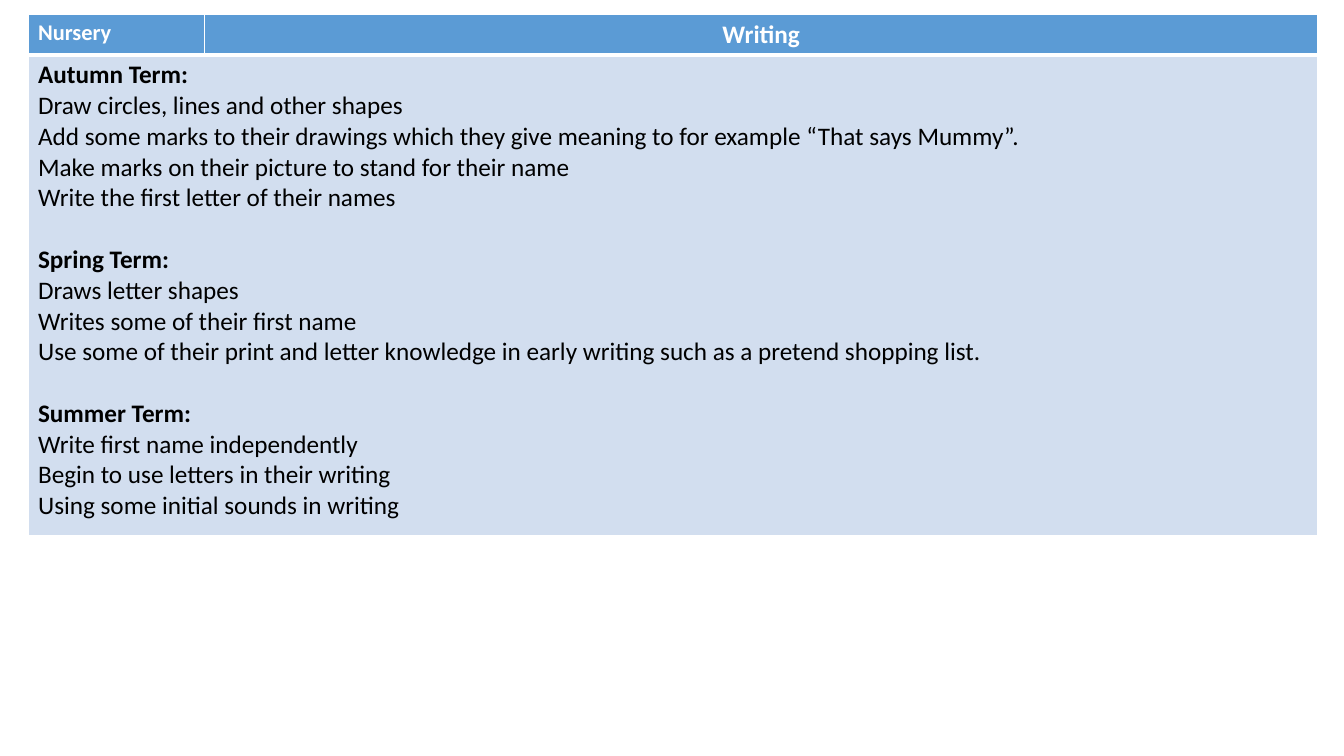
from lxml import etree
from pptx import Presentation
from pptx.dml.color import RGBColor
from pptx.enum import text
from pptx.oxml import ns
from pptx.util import Pt

WHITE = RGBColor(0xFF, 0xFF, 0xFF)
BLACK = RGBColor(0, 0, 0)
HEADER_BLUE = RGBColor(0x5B, 0x9B, 0xD5)
BODY_BLUE = RGBColor(0xD2, 0xDE, 0xEF)
FONT = "Calibri"
TEXT_SIZE = 18
LINE_HEIGHT = 22

TERMS = {
    "Autumn Term:": [
        "Draw circles, lines and other shapes",
        "Add some marks to their drawings which they give meaning to for example “That says Mummy”.",
        "Make marks on their picture to stand for their name",
        "Write the first letter of their names",
    ],
    "Spring Term:": [
        "Draws letter shapes",
        "Writes some of their first name",
        "Use some of their print and letter knowledge in early writing such as a pretend shopping list.",
    ],
    "Summer Term:": [
        "Write first name independently",
        "Begin to use letters in their writing",
        "Using some initial sounds in writing",
    ],
}


def write(para, words, size=TEXT_SIZE, color=BLACK, bold=False,
          align=text.PP_ALIGN.LEFT, before=0):
    para.alignment = align
    para.space_before = Pt(before)
    span = para.add_run()
    span.text = words
    span.font.name = FONT
    span.font.size = Pt(size)
    span.font.bold = bold
    span.font.color.rgb = color


def style_cell(cell, fill, bottom=1):
    cell.fill.solid()
    cell.fill.fore_color.rgb = fill
    # Borders come before the fill in the cell properties
    props = cell._tc.get_or_add_tcPr()
    widths = {"lnL": 1, "lnR": 1, "lnT": 1, "lnB": bottom}
    for position, (side, width) in enumerate(widths.items()):
        line = etree.Element(ns.qn(f"a:{side}"), w=str(Pt(width)))
        solid = etree.SubElement(line, ns.qn("a:solidFill"))
        etree.SubElement(solid, ns.qn("a:srgbClr"), val=str(WHITE))
        props.insert(position, line)


def fill_header(row):
    nursery, writing = row.cells
    for cell in (nursery, writing):
        style_cell(cell, HEADER_BLUE, bottom=3)
    write(nursery.text_frame.paragraphs[0], "Nursery", size=16, color=WHITE, bold=True)
    write(writing.text_frame.paragraphs[0], "Writing", color=WHITE, bold=True,
          align=text.PP_ALIGN.CENTER)


def fill_terms(row):
    body, hidden_half = row.cells
    body.merge(hidden_half)
    for cell in (body, hidden_half):
        style_cell(cell, BODY_BLUE)
    frame = body.text_frame
    para = frame.paragraphs[0]
    for number, (term, goals) in enumerate(TERMS.items()):
        if number:
            para = frame.add_paragraph()
        write(para, term, bold=True, before=LINE_HEIGHT if number else 0)
        for goal in goals:
            write(frame.add_paragraph(), goal)


def add_writing_table(page, left, top, width, height):
    table = page.shapes.add_table(2, 2, Pt(left), Pt(top), Pt(width), Pt(height)).table
    table.horz_banding = False
    first_column, header_height = 126, 29
    for column, size in zip(table.columns, (first_column, width - first_column)):
        column.width = Pt(size)
    for row, size in zip(table.rows, (header_height, height - header_height)):
        row.height = Pt(size)
    fill_header(table.rows[0])
    fill_terms(table.rows[1])


def main():
    deck = Presentation()
    deck.slide_width, deck.slide_height = Pt(960), Pt(540)
    page = deck.slides.add_slide(deck.slide_layouts[6])
    add_writing_table(page, left=20, top=10, width=921.5, height=372.5)
    deck.save("out.pptx")


if __name__ == "__main__":
    main()
